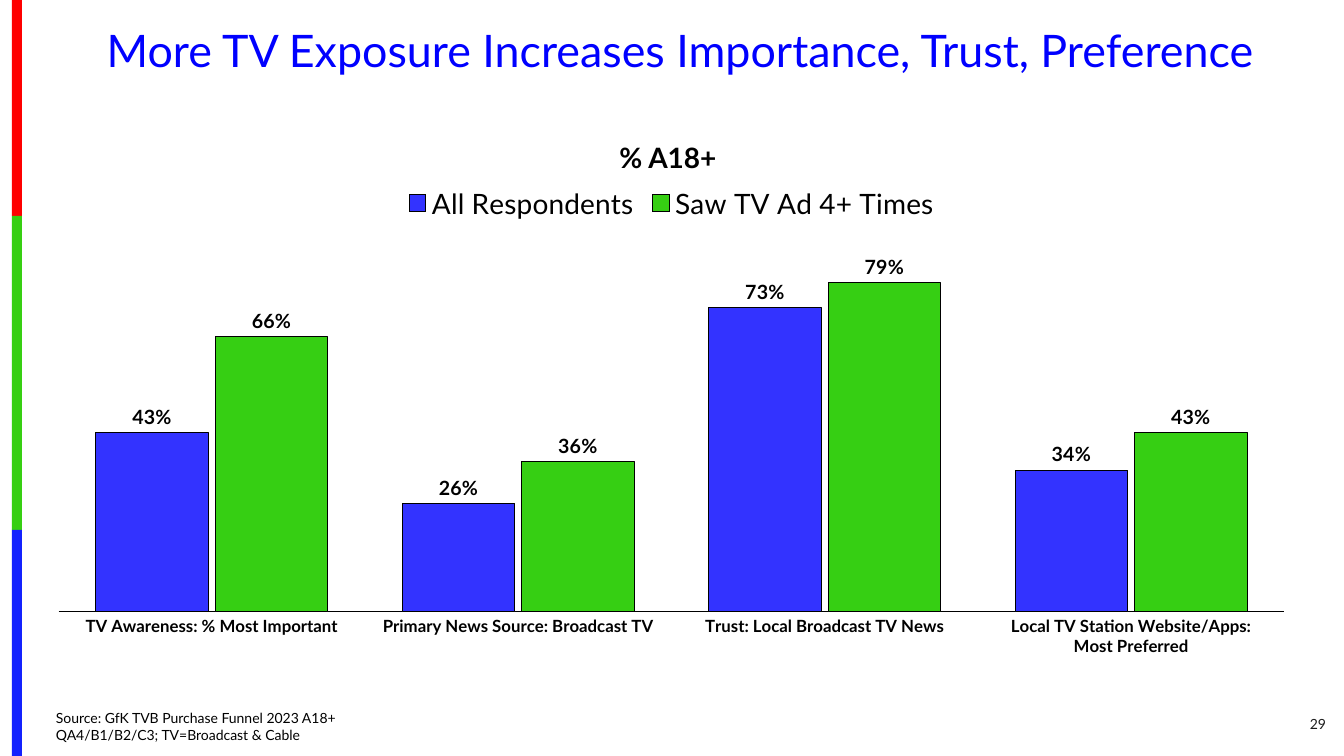
"""Build the slide on TV exposure and its effect on importance, trust and preference."""
import dataclasses

import lxml.etree
import pptx
import pptx.chart.data
import pptx.dml.color
import pptx.enum.chart
import pptx.enum.shapes
import pptx.enum.text
import pptx.oxml.ns
import pptx.util

EMU_PER_PX = 914400 / 100.8
ALIGN = pptx.enum.text.PP_ALIGN
ANCHOR = pptx.enum.text.MSO_ANCHOR


@dataclasses.dataclass(frozen=True)
class Theme:
    """Colours, type sizes and font of the slide."""
    font: str = "Lato"
    ink: str = "000000"
    page_ink: str = "1C1C1C"
    title_ink: str = "0000FF"
    stripes: tuple = ("FE0000", "36CF12", "1322FE")
    bars: tuple = ("3333FF", "36CF13")
    title: int = 32
    heading: int = 20
    value: int = 14
    category: int = 12
    small: int = 10
    outline: float = 0.75


THEME = Theme()


def px(length):
    """Turn pixels into EMU."""
    return pptx.util.Emu(round(length * EMU_PER_PX))


def rgb(code):
    """Turn a hex code into a colour."""
    return pptx.dml.color.RGBColor.from_string(code)


def style_font(font, size, colour=THEME.ink, bold=False):
    """Set face, size, colour and weight of a font."""
    font.name = THEME.font
    font.size = pptx.util.Pt(size)
    font.color.rgb = rgb(colour)
    font.bold = bold


def outline(line):
    """Give a line the thin dark stroke used in the chart."""
    line.color.rgb = rgb(THEME.ink)
    line.width = pptx.util.Pt(THEME.outline)


def add_text(slide, box, lines, size, colour=THEME.ink, bold=False,
             align=ALIGN.LEFT, anchor=ANCHOR.TOP, spacing=None):
    """Add a text box with one paragraph for each line."""
    frame = slide.shapes.add_textbox(*map(px, box)).text_frame
    frame.word_wrap = True
    frame.vertical_anchor = anchor
    frame.text = "\n".join(lines)
    for paragraph in frame.paragraphs:
        paragraph.alignment = align
        paragraph.line_spacing = spacing
        style_font(paragraph.font, size, colour, bold)


def add_side_stripes(slide, left, width, edges):
    """Stack the coloured stripes between successive edges."""
    for top, bottom, colour in zip(edges, edges[1:], THEME.stripes):
        stripe = slide.shapes.add_shape(
            pptx.enum.shapes.MSO_SHAPE.RECTANGLE,
            px(left), px(top), px(width), px(bottom - top))
        stripe.shadow.inherit = False
        stripe.fill.solid()
        stripe.fill.fore_color.rgb = rgb(colour)
        stripe.line.fill.background()


def place_plot(chart, **fractions):
    """Fix the inner plot area as fractions of the chart."""
    qn = pptx.oxml.ns.qn
    plot_area = chart._chartSpace.chart.plotArea
    for old in plot_area.findall(qn("c:layout")):
        plot_area.remove(old)
    layout = lxml.etree.Element(qn("c:layout"))
    plot_area.insert(0, layout)
    manual = lxml.etree.SubElement(layout, qn("c:manualLayout"))
    settings = {"layoutTarget": "inner", "xMode": "edge", "yMode": "edge", **fractions}
    for tag, setting in settings.items():
        lxml.etree.SubElement(manual, qn(f"c:{tag}")).set("val", str(setting))


def add_exposure_chart(slide, box, categories, responses):
    """Add the clustered columns that compare the respondent groups."""
    survey = pptx.chart.data.CategoryChartData(number_format="0%")
    survey.categories = categories
    for group, shares in responses.items():
        survey.add_series(group, shares)
    chart = slide.shapes.add_chart(
        pptx.enum.chart.XL_CHART_TYPE.COLUMN_CLUSTERED, *map(px, box), survey).chart
    style_font(chart.font, THEME.small)
    chart.has_title = False
    chart.has_legend = True
    chart.legend.position = pptx.enum.chart.XL_LEGEND_POSITION.TOP
    chart.legend.include_in_layout = False
    style_font(chart.legend.font, THEME.heading)

    shares_axis = chart.value_axis
    shares_axis.visible = False
    shares_axis.has_major_gridlines = False
    shares_axis.minimum_scale, shares_axis.maximum_scale = 0, 0.9
    topics_axis = chart.category_axis
    topics_axis.major_tick_mark = pptx.enum.chart.XL_TICK_MARK.NONE
    outline(topics_axis.format.line)
    style_font(topics_axis.tick_labels.font, THEME.category, bold=True)

    columns = chart.plots[0]
    columns.vary_by_categories = False
    columns.gap_width, columns.overlap = 66, -6
    for group, colour in zip(columns.series, THEME.bars):
        group.format.fill.solid()
        group.format.fill.fore_color.rgb = rgb(colour)
        outline(group.format.line)
        labels = group.data_labels
        labels.show_value = True
        labels.position = pptx.enum.chart.XL_LABEL_POSITION.OUTSIDE_END
        labels.number_format = "0%"
        labels.number_format_is_linked = False
        style_font(labels.font, THEME.value, bold=True)
    place_plot(chart, x=0.02, y=0.13, w=0.96, h=0.76)


def main():
    """Build and save the slide."""
    deck = pptx.Presentation()
    deck.slide_width, deck.slide_height = px(1344), px(756)
    slide = deck.slides.add_slide(deck.slide_layouts[6])

    add_side_stripes(slide, 12, 10, (0, 216, 530, 756))
    add_exposure_chart(
        slide, (33, 173, 1277, 493),
        ("TV Awareness: % Most Important", "Primary News Source: Broadcast TV",
         "Trust: Local Broadcast TV News",
         "Local TV Station Website/Apps:\nMost Preferred"),
        {"All Respondents": (0.43, 0.26, 0.73, 0.34),
         "Saw TV Ad 4+ Times": (0.66, 0.36, 0.79, 0.43)})
    add_text(slide, (42, 24, 1277, 72),
             ["More TV Exposure Increases Importance, Trust, Preference"],
             THEME.title, THEME.title_ink, align=ALIGN.CENTER, spacing=0.9)
    add_text(slide, (1227, 704, 109, 40), ["29"], THEME.small, THEME.page_ink,
             align=ALIGN.RIGHT, anchor=ANCHOR.MIDDLE)
    add_text(slide, (46, 704, 953, 44),
             ["Source: GfK TVB Purchase Funnel 2023 A18+",
              "QA4/B1/B2/C3; TV=Broadcast & Cable"],
             THEME.small, anchor=ANCHOR.BOTTOM)
    add_text(slide, (479, 136, 378, 44), ["% A18+"], THEME.heading,
             bold=True, align=ALIGN.CENTER)
    deck.save("out.pptx")


if __name__ == "__main__":
    main()
